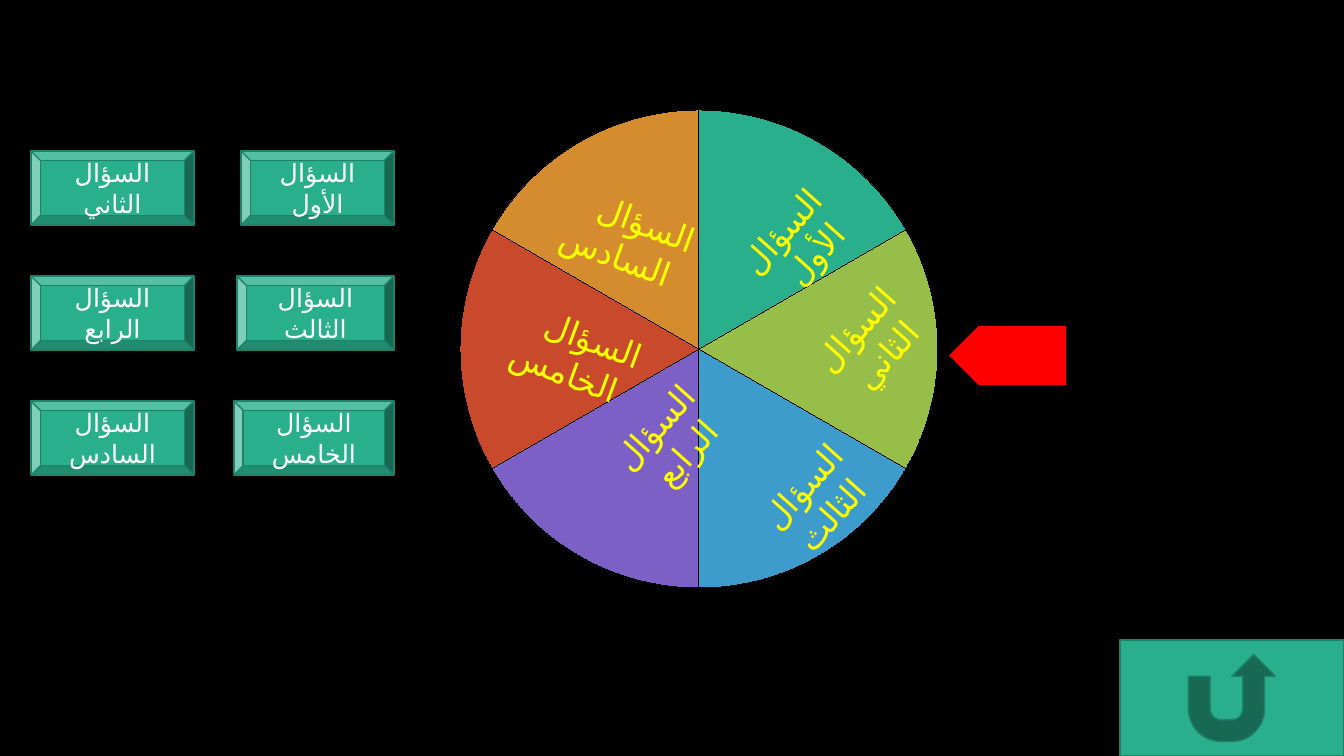
from math import cos, radians, sin, tan

from lxml import etree
from pptx import Presentation
from pptx import util as u
from pptx.dml.color import RGBColor
from pptx.enum import shapes, text
from pptx.oxml.ns import qn

PX = 914400 / 100.8
GREEN, EDGE, BLACK, RED = "29AF8C", "1E8168", "000000", "FF0000"
YELLOW, WHITE = "FFFF00", "FFFFFF"

QUESTIONS = [
    ("السؤال الأول", GREEN, (673, 227, 178, 50), 311.8),
    ("السؤال الثاني", "97BE49", (747, 325, 178, 50), 311.8),
    ("السؤال الثالث", "3D9CCC", (684, 487, 190, 50), 311.8),
    ("السؤال الرابع", "7C60C6", (534, 429, 192, 50), 311.8),
    ("السؤال الخامس", "C9492C", (454, 300, 203, 50), 20.4),
    ("السؤال السادس", "D58C2E", (507, 184, 203, 50), 20.4),
]
CENTER_X, CENTER_Y, RADIUS = 699, 349, 239
BUTTON_TOP, BUTTON_STEP, BUTTON_HEIGHT = 151, 125, 74
LEFT_COLUMN, LEFT_WIDTH, RIGHT_EDGE = 31, 163, 394
RIGHT_WIDTHS = [153, 157, 160]
POINTER = (949, 326, 117, 59)
RETURN_BUTTON = (1120, 640, 224, 116)


def emu(px):
    return round(px * PX)


def color(code):
    return RGBColor.from_string(code)


def paint(shape, fill, line=None, width=1):
    shape.shadow.inherit = False
    shape.fill.solid()
    shape.fill.fore_color.rgb = color(fill)
    if line:
        shape.line.color.rgb = color(line)
        shape._element.spPr.find(qn("a:ln")).set("w", str(u.Pt(width)))
    else:
        shape.line.fill.background()


def write(shape, wording, size, ink, align):
    frame = shape.text_frame
    frame.word_wrap = True
    paragraph = frame.paragraphs[0]
    paragraph.alignment = align
    run = paragraph.add_run()
    run.text = wording
    run.font.size = u.Pt(size)
    run.font.name = "Calibri"
    run.font.color.rgb = color(ink)
    etree.SubElement(run.font._element, qn("a:cs"), typeface="DejaVu Sans")
    return frame


def add_preset(slide, kind, box, fill, line=None):
    shape = slide.shapes.add_shape(kind, *map(emu, box))
    paint(shape, fill, line)
    return shape


def rim_point(angle, pull=0):
    turn = radians(angle)
    return (emu(CENTER_X + RADIUS * (cos(turn) - pull * sin(turn))),
            emu(CENTER_Y + RADIUS * (sin(turn) + pull * cos(turn))))


def add_slice(wheel, start, sweep, fill):
    end = start + sweep
    pull = 4 / 3 * tan(radians(sweep / 4))
    outline = wheel.build_freeform(*rim_point(start))
    outline.add_line_segments([
        rim_point(start, pull), rim_point(end, -pull), rim_point(end),
        (emu(CENTER_X), emu(CENTER_Y)),
    ], close=True)
    piece = outline.convert_to_shape()
    route = next(piece._element.iter(qn("a:path")))
    arc = etree.Element(qn("a:cubicBezTo"))
    for segment in route.findall(qn("a:lnTo"))[:3]:
        arc.append(segment[0])
        route.remove(segment)
    route.insert(1, arc)
    paint(piece, fill, BLACK, 0)


def add_wheel(slide):
    wheel = slide.shapes.add_group_shape().shapes
    sweep = 360 // len(QUESTIONS)
    for i, (_, fill, _, _) in enumerate(QUESTIONS):
        add_slice(wheel, i * sweep - 90, sweep, fill)
    for wording, _, box, rotation in QUESTIONS:
        label = wheel.add_textbox(*map(emu, box))
        label.rotation = rotation
        frame = write(label, wording + " ", 24, YELLOW, text.PP_ALIGN.RIGHT)
        frame.auto_size = text.MSO_AUTO_SIZE.SHAPE_TO_FIT_TEXT


def add_buttons(slide):
    for i, (wording, *_) in enumerate(QUESTIONS):
        row, in_left = divmod(i, 2)
        width = LEFT_WIDTH if in_left else RIGHT_WIDTHS[row]
        left = LEFT_COLUMN if in_left else RIGHT_EDGE - width
        box = (left, BUTTON_TOP + row * BUTTON_STEP, width, BUTTON_HEIGHT)
        button = add_preset(slide, shapes.MSO_SHAPE.BEVEL, box, GREEN, EDGE)
        frame = write(button, wording, 18, WHITE, text.PP_ALIGN.CENTER)
        frame.vertical_anchor = text.MSO_ANCHOR.MIDDLE


def main():
    deck = Presentation()
    deck.slide_width, deck.slide_height = emu(1344), emu(756)
    slide = deck.slides.add_slide(deck.slide_layouts[6])
    slide.background.fill.solid()
    slide.background.fill.fore_color.rgb = color(BLACK)
    add_wheel(slide)
    pointer = add_preset(slide, shapes.MSO_SHAPE.PENTAGON, POINTER, RED)
    pointer.rotation = 180
    add_buttons(slide)
    add_preset(slide, shapes.MSO_SHAPE.ACTION_BUTTON_RETURN, RETURN_BUTTON, GREEN, EDGE)
    deck.save("out.pptx")


if __name__ == "__main__":
    main()
